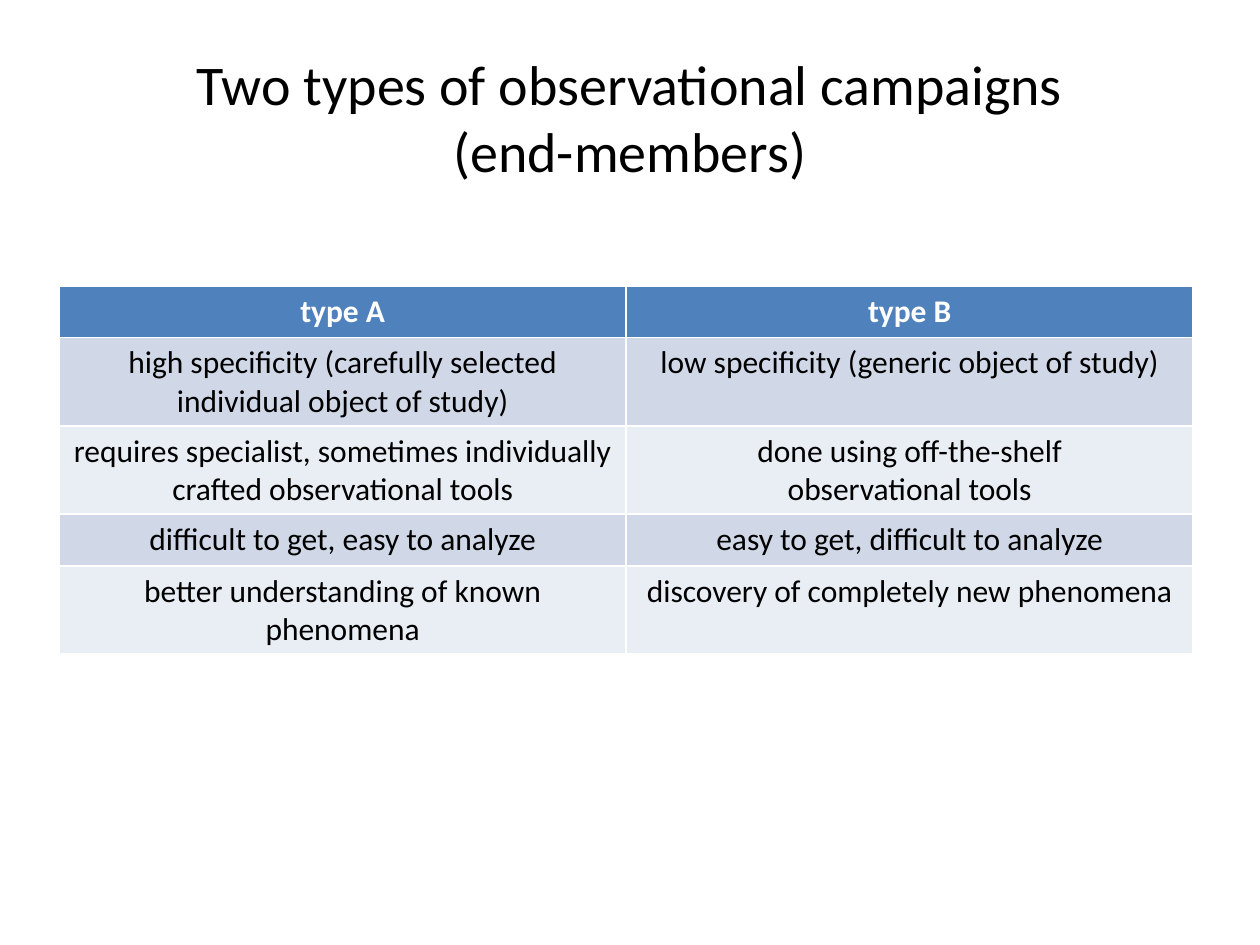
from dataclasses import dataclass

from pptx import Presentation
from pptx.dml.color import RGBColor
from pptx.enum.text import MSO_ANCHOR, PP_ALIGN
from pptx.util import Inches, Pt

CENTER = PP_ALIGN.CENTER
MIDDLE = MSO_ANCHOR.MIDDLE


@dataclass(frozen=True)
class Theme:
    font: str = "Calibri"
    title_size: int = 32
    table_size: int = 18
    ink: str = "000000"
    header_ink: str = "FFFFFF"
    header_fill: str = "4F81BD"
    band_fills: tuple = ("D0D8E8", "E9EDF4")


THEME = Theme()

TITLE = "Two types of observational campaigns\n(end-members)"
CAMPAIGN_TYPES = [
    ("type A", "type B"),
    ("high specificity (carefully selected individual object of study)",
     "low specificity (generic object of study)"),
    ("requires specialist, sometimes individually crafted observational tools",
     "done using off-the-shelf\nobservational tools"),
    ("difficult to get, easy to analyze", "easy to get, difficult to analyze"),
    ("better understanding of known phenomena",
     "discovery of completely new phenomena"),
]


def style_paragraph(para, size, color, bold=False):
    para.alignment = CENTER
    para.font.name = THEME.font
    para.font.size = Pt(size)
    para.font.bold = bold
    para.font.color.rgb = RGBColor.from_string(color)


def add_title(page, text, left, top, width, height):
    box = page.shapes.add_textbox(left, top, width, height)
    frame = box.text_frame
    frame.word_wrap = True
    frame.vertical_anchor = MIDDLE
    para = frame.paragraphs[0]
    para.text = text
    style_paragraph(para, THEME.title_size, THEME.ink)


def fill_cell(cell, text, fill, color, bold):
    cell.fill.solid()
    cell.fill.fore_color.rgb = RGBColor.from_string(fill)
    cell.text_frame.text = text
    for para in cell.text_frame.paragraphs:
        style_paragraph(para, THEME.table_size, color, bold)


def add_comparison(page, rows, left, top, width, height):
    frame = page.shapes.add_table(
        len(rows), len(rows[0]), left, top, width, height)
    table = frame.table
    for row_index, texts in enumerate(rows):
        is_header = row_index == 0
        band = THEME.band_fills[(row_index - 1) % len(THEME.band_fills)]
        fill = THEME.header_fill if is_header else band
        color = THEME.header_ink if is_header else THEME.ink
        for column_index, text in enumerate(texts):
            cell = table.cell(row_index, column_index)
            fill_cell(cell, text, fill, color, is_header)


def main():
    deck = Presentation()
    deck.slide_width = Inches(10)
    deck.slide_height = Inches(7.5)
    page = deck.slides.add_slide(deck.slide_layouts[6])
    add_title(page, TITLE, Inches(0.5), Inches(0.3), Inches(9), Inches(1.25))
    add_comparison(page, CAMPAIGN_TYPES,
                   Inches(0.47), Inches(2.27), Inches(9), Inches(2.05))
    deck.save("out.pptx")


if __name__ == "__main__":
    main()
